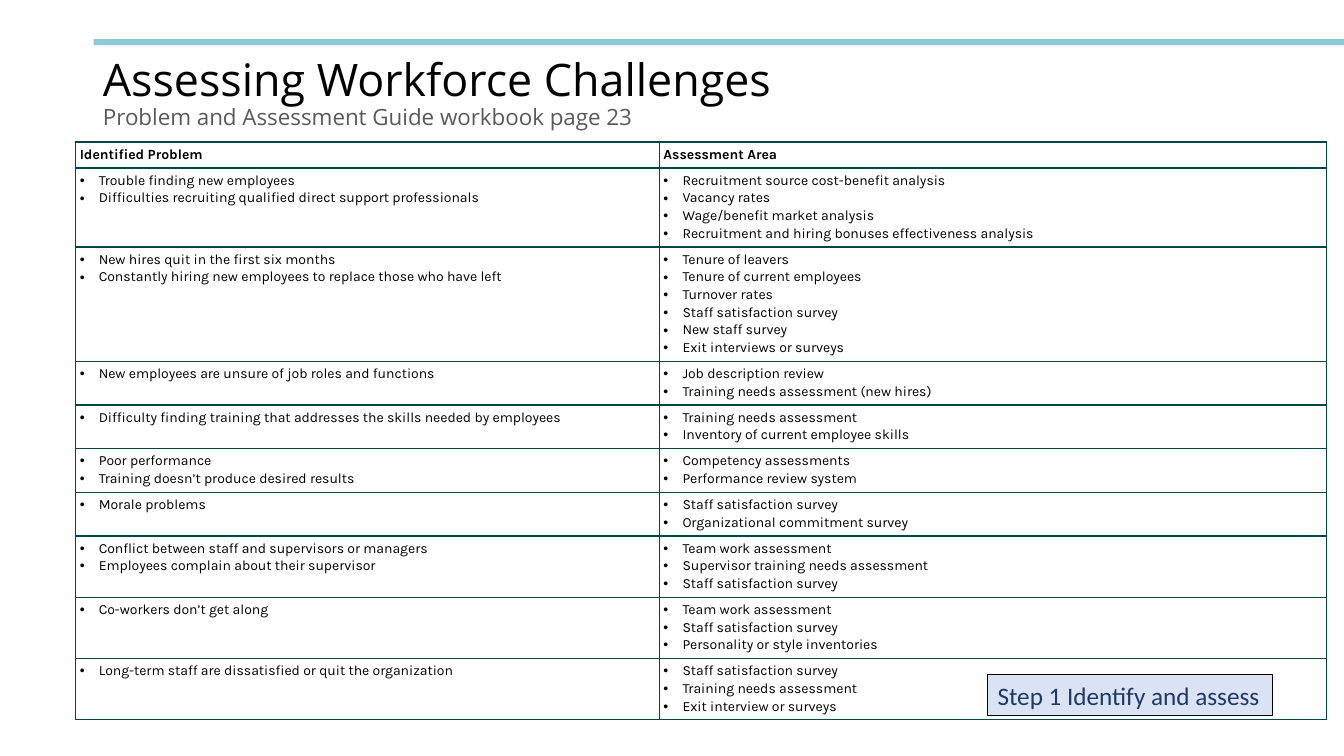
from lxml import etree
from pptx import Presentation
from pptx import util as u
from pptx.dml.color import RGBColor
from pptx.enum import shapes, text
from pptx.oxml import ns

TITLE = "Assessing Workforce Challenges "
SUBTITLE = "Problem and Assessment Guide workbook page 23"
STEP = "Step 1 Identify and assess"
HEADINGS = ("Identified Problem", "Assessment Area")
ASSESSMENTS = [
    (["Trouble finding new employees",
      "Difficulties recruiting qualified direct support professionals"],
     ["Recruitment source cost-benefit analysis", "Vacancy rates",
      "Wage/benefit market analysis",
      "Recruitment and hiring bonuses effectiveness analysis"]),
    (["New hires quit in the first six months",
      "Constantly hiring new employees to replace those who have left"],
     ["Tenure of leavers", "Tenure of current employees", "Turnover rates",
      "Staff satisfaction survey", "New staff survey", "Exit interviews or surveys"]),
    (["New employees are unsure of job roles and functions"],
     ["Job description review", "Training needs assessment (new hires)"]),
    (["Difficulty finding training that addresses the skills needed by employees"],
     ["Training needs assessment", "Inventory of current employee skills"]),
    (["Poor performance", "Training doesn’t produce desired results"],
     ["Competency assessments", "Performance review system"]),
    (["Morale problems"],
     ["Staff satisfaction survey", "Organizational commitment survey"]),
    (["Conflict between staff and supervisors or managers",
      "Employees complain about their supervisor"],
     ["Team work assessment", "Supervisor training needs assessment",
      "Staff satisfaction survey"]),
    (["Co-workers don’t get along"],
     ["Team work assessment", "Staff satisfaction survey",
      "Personality or style inventories"]),
    (["Long-term staff are dissatisfied or quit the organization"],
     ["Staff satisfaction survey", "Training needs assessment",
      "Exit interview or surveys"]),
]

BLACK = RGBColor(0x00, 0x00, 0x00)
GREY = RGBColor(0x59, 0x59, 0x59)
SKY = RGBColor(0x8E, 0xC7, 0xD7)
PALE_BLUE = RGBColor(0xDA, 0xE3, 0xF3)
NAVY = RGBColor(0x20, 0x38, 0x64)
GREEN = RGBColor(0x00, 0x47, 0x43)

COLUMN_WIDTHS = (14.71, 16.81)
LINE_HEIGHT, ROW_PADDING = 0.445, 0.21
CELL_MARGIN = 0.11
BULLET_INDENT = 0.48


def add_span(para, words, font, size, color, bold=False):
    span = para.add_run()
    span.text = words
    span.font.name, span.font.size, span.font.bold = font, u.Pt(size), bold
    span.font.color.rgb = color


def add_box(slide, left, top, width, height, fill):
    box = slide.shapes.add_shape(shapes.MSO_SHAPE.RECTANGLE, u.Cm(left), u.Cm(top),
                                 u.Cm(width), u.Cm(height))
    box.shadow.inherit = False
    box.fill.solid()
    box.fill.fore_color.rgb = fill
    box.line.fill.background()
    return box


def add_bullet(para):
    props = para._p.get_or_add_pPr()
    props.set("marL", str(u.Cm(BULLET_INDENT)))
    props.set("indent", str(-u.Cm(BULLET_INDENT)))
    para.space_after = u.Pt(1)
    etree.SubElement(props, ns.qn("a:buFont"), typeface="Arial")
    etree.SubElement(props, ns.qn("a:buChar"), char="•")


def add_borders(cell):
    props = cell._tc.get_or_add_tcPr()
    for side in ("lnL", "lnR", "lnT", "lnB"):
        line = etree.SubElement(props, ns.qn("a:" + side), w=str(u.Pt(1)))
        fill = etree.SubElement(line, ns.qn("a:solidFill"))
        etree.SubElement(fill, ns.qn("a:srgbClr"), val=str(GREEN))


def fill_cell(cell, lines, heading):
    add_borders(cell)
    cell.fill.background()
    cell.margin_left = cell.margin_right = u.Cm(CELL_MARGIN)
    cell.margin_top = cell.margin_bottom = u.Cm(CELL_MARGIN)
    frame = cell.text_frame
    for index, words in enumerate(lines):
        para = frame.add_paragraph() if index else frame.paragraphs[0]
        if not heading:
            add_bullet(para)
        add_span(para, words, "Karla", 10, BLACK, bold=heading)


def add_title(slide):
    title = slide.shapes.title
    title.left, title.top, title.width, title.height = map(u.Cm, (2.34, 1.02, 29.62, 2.72))
    frame = title.text_frame
    frame.auto_size = text.MSO_AUTO_SIZE.NONE
    frame.vertical_anchor = text.MSO_ANCHOR.MIDDLE
    para = frame.paragraphs[0]
    para.alignment, para.line_spacing = text.PP_ALIGN.LEFT, 0.9
    add_span(para, TITLE, "Open Sans", 32, BLACK)
    para.add_line_break()
    add_span(para, SUBTITLE, "Open Sans", 16, GREY)


def add_assessment_table(slide):
    rows = [tuple([heading] for heading in HEADINGS)] + ASSESSMENTS
    heights = [LINE_HEIGHT * max(map(len, row)) + ROW_PADDING for row in rows]
    table = slide.shapes.add_table(len(rows), len(HEADINGS), u.Cm(1.9), u.Cm(3.58),
                                   u.Cm(sum(COLUMN_WIDTHS)), u.Cm(sum(heights))).table
    table.first_row = table.horz_banding = False
    for column, width in zip(table.columns, COLUMN_WIDTHS):
        column.width = u.Cm(width)
    for index, (row, height) in enumerate(zip(rows, heights)):
        table.rows[index].height = u.Cm(height)
        for cell, lines in zip(table.rows[index].cells, row):
            fill_cell(cell, lines, heading=index == 0)


def add_step_label(slide):
    label = add_box(slide, 24.89, 17.0, 7.19, 1.03, PALE_BLUE)
    label.line.color.rgb = BLACK
    label.line.width = u.Pt(0.75)
    label.text_frame.word_wrap = False
    para = label.text_frame.paragraphs[0]
    para.alignment = text.PP_ALIGN.LEFT
    add_span(para, STEP, "Calibri", 18, NAVY)


def main():
    deck = Presentation()
    deck.slide_width, deck.slide_height = u.Cm(33.87), u.Cm(19.05)
    slide = deck.slides.add_slide(deck.slide_layouts[5])
    add_box(slide, 2.36, 0.99, 31.51, 0.15, SKY)
    add_title(slide)
    add_assessment_table(slide)
    add_step_label(slide)
    deck.save("out.pptx")


if __name__ == "__main__":
    main()
